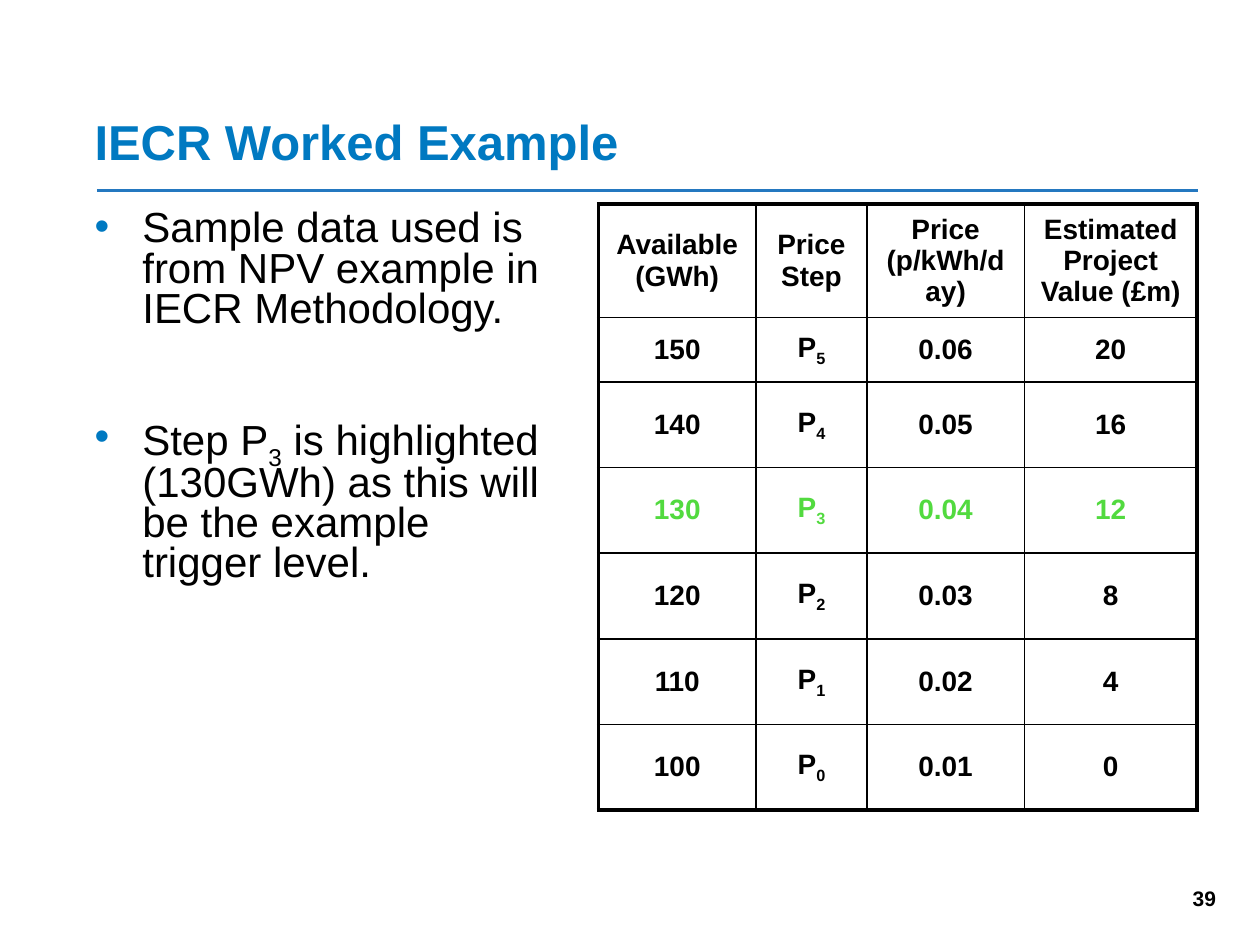
from lxml.etree import SubElement
from pptx import Presentation
from pptx.dml.color import RGBColor
from pptx.enum.shapes import MSO_CONNECTOR
from pptx.enum.text import MSO_ANCHOR, MSO_AUTO_SIZE, PP_ALIGN
from pptx.oxml.ns import qn
from pptx.util import Inches, Pt

BLACK = RGBColor(0x00, 0x00, 0x00)
BLUE = RGBColor(0x00, 0x79, 0xC1)
RULE_BLUE = RGBColor(0x24, 0x78, 0xC0)
GREEN = RGBColor(0x52, 0xDA, 0x3F)
FONT = "Arial"

TITLE = "IECR Worked Example"
PAGE = "39"
POINTS = [
    ["Sample data used is from NPV example in IECR Methodology."],
    ["Step P", "3", " is highlighted (130GWh) as this will be the example trigger level."],
]
HEADINGS = ["Available (GWh)", "Price Step", "Price (p/kWh/day)", "Estimated Project Value (£m)"]
STEPS = [
    ("150", "5", "0.06", "20"),
    ("140", "4", "0.05", "16"),
    ("130", "3", "0.04", "12"),
    ("120", "2", "0.03", "8"),
    ("110", "1", "0.02", "4"),
    ("100", "0", "0.01", "0"),
]
TRIGGER_STEP = "3"
COLUMN_WIDTHS = [1.25, 0.88, 1.25, 1.37]
ROW_HEIGHTS = [0.66, 0.51] + [0.68] * 5
LEFT, CONTENT_TOP, TABLE_LEFT = 0.65, 1.62, 4.75


def place(shape, left, top, width, height):
    shape.left, shape.top = Inches(left), Inches(top)
    shape.width, shape.height = Inches(width), Inches(height)


def write(paragraph, pieces, size, color=BLACK, bold=False, align=PP_ALIGN.LEFT):
    paragraph.alignment = align
    for index, piece in enumerate(pieces):
        run = paragraph.add_run()
        run.text = piece
        font = run.font
        font.name, font.size, font.bold = FONT, Pt(size), bold
        font.color.rgb = color
        if index % 2:
            run._r.get_or_add_rPr().set("baseline", "-25000")


def add_bullet(paragraph, indent):
    properties = paragraph._p.get_or_add_pPr()
    properties.set("marL", str(Inches(indent)))
    properties.set("indent", str(-Inches(indent)))
    bullet_color = SubElement(properties, qn("a:buClr"))
    SubElement(bullet_color, qn("a:srgbClr"), val=str(BLUE))
    SubElement(properties, qn("a:buFont"), typeface=FONT)
    SubElement(properties, qn("a:buChar"), char="•")


def add_borders(cell, outer_sides):
    properties = cell._tc.get_or_add_tcPr()
    for side in "LRTB":
        width = Pt(2.25 if side in outer_sides else 1)
        border = SubElement(properties, qn(f"a:ln{side}"), w=str(width))
        fill = SubElement(border, qn("a:solidFill"))
        SubElement(fill, qn("a:srgbClr"), val=str(BLACK))


def add_price_table(slide):
    rows = [[[heading] for heading in HEADINGS]]
    rows += [[[gwh], ["P", step], [price], [value]] for gwh, step, price, value in STEPS]
    last_row, last_column = len(rows) - 1, len(HEADINGS) - 1
    table = slide.shapes.add_table(
        len(rows), len(HEADINGS), Inches(TABLE_LEFT), Inches(CONTENT_TOP),
        Inches(sum(COLUMN_WIDTHS)), Inches(sum(ROW_HEIGHTS))).table
    table.first_row = table.horz_banding = False
    for column, width in zip(table.columns, COLUMN_WIDTHS):
        column.width = Inches(width)
    for r, (row, height) in enumerate(zip(rows, ROW_HEIGHTS)):
        table.rows[r].height = Inches(height)
        color = GREEN if row[1] == ["P", TRIGGER_STEP] else BLACK
        for c, pieces in enumerate(row):
            cell = table.cell(r, c)
            edges = {"L": c == 0, "R": c == last_column, "T": r == 0, "B": r == last_row}
            add_borders(cell, [side for side, outer in edges.items() if outer])
            cell.fill.background()
            cell.vertical_anchor = MSO_ANCHOR.MIDDLE
            write(cell.text_frame.paragraphs[0], pieces, 16, color, True, PP_ALIGN.CENTER)


def main():
    deck = Presentation()
    deck.slide_width, deck.slide_height = Inches(10), Inches(7.5)
    slide = deck.slides.add_slide(deck.slide_layouts[1])

    rule = slide.shapes.add_connector(
        MSO_CONNECTOR.STRAIGHT, Inches(0.77), Inches(1.51), Inches(9.51), Inches(1.51))
    rule.line.color.rgb = RULE_BLUE
    rule.line.width = Pt(1.5)
    SubElement(rule._element.spPr, qn("a:effectLst"))

    page_number = slide.shapes.add_textbox(
        Inches(7.42), Inches(6.98), Inches(2.33), Inches(0.4)).text_frame
    page_number.word_wrap = True
    write(page_number.paragraphs[0], [PAGE], 12, bold=True, align=PP_ALIGN.RIGHT)

    title = slide.shapes.title
    place(title, LEFT, 0.83, 8.85, 0.57)
    title.text_frame.vertical_anchor = MSO_ANCHOR.BOTTOM
    title.text_frame.auto_size = MSO_AUTO_SIZE.SHAPE_TO_FIT_TEXT
    write(title.text_frame.paragraphs[0], [TITLE], 28, BLUE, True)

    body = slide.placeholders[1]
    place(body, LEFT, CONTENT_TOP, 3.73, 5.08)
    body.text_frame.auto_size = MSO_AUTO_SIZE.NONE
    for index, pieces in enumerate(POINTS):
        point = body.text_frame.paragraphs[0] if index == 0 else body.text_frame.add_paragraph()
        add_bullet(point, 0.38)
        point.line_spacing = 0.8
        point.space_before = Pt(50 if index else 0)
        write(point, pieces, 24)

    add_price_table(slide)
    deck.save("out.pptx")


if __name__ == "__main__":
    main()
